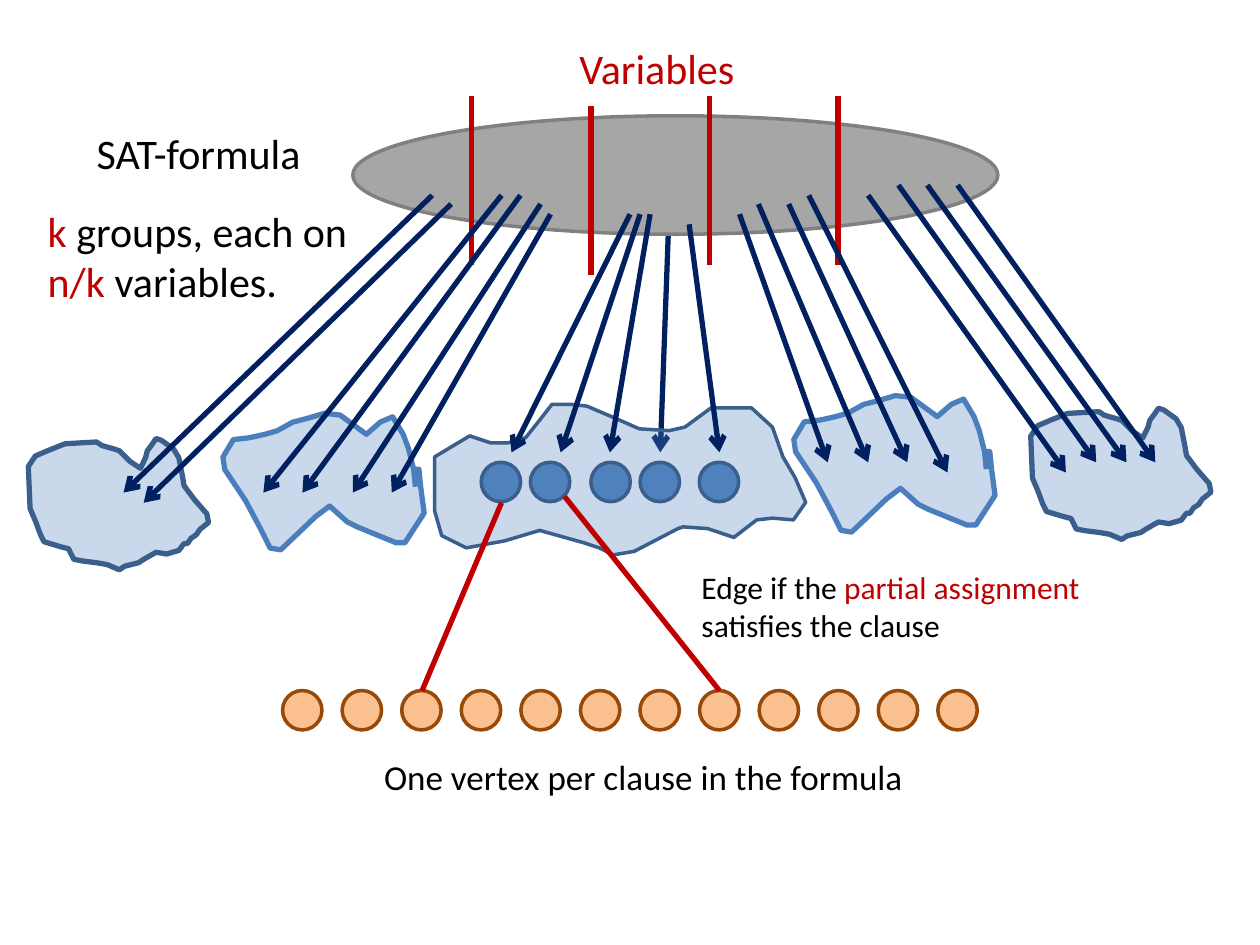
from dataclasses import dataclass

from lxml import etree
from pptx import Presentation
from pptx.dml.color import RGBColor
from pptx.enum.shapes import MSO_CONNECTOR, MSO_SHAPE
from pptx.enum.text import MSO_AUTO_SIZE
from pptx.oxml.ns import qn
from pptx.util import Pt

STRAIGHT = MSO_CONNECTOR.STRAIGHT
OVAL = MSO_SHAPE.OVAL
FIT_SHAPE = MSO_AUTO_SIZE.SHAPE_TO_FIT_TEXT


@dataclass(frozen=True)
class Theme:
    font: str = "Calibri"
    large: int = 24
    medium: int = 20
    small: int = 18
    black: str = "000000"
    red: str = "C00000"
    navy: str = "002060"
    blue: str = "4F81BD"
    blue_edge: str = "3A5F8C"
    wing_edge: str = "4B7EBC"
    gray: str = "A6A6A6"
    gray_edge: str = "808080"
    orange: str = "FAC090"
    orange_edge: str = "984807"
    thin: int = 2
    thick: int = 3
    region_alpha: int = 30000


THEME = Theme()

LABELS = [
    ((324, 20.9, 104.4, 36), THEME.large, [[[("Variables", THEME.red)]]]),
    ((48.2, 69.1, 133.9, 36), THEME.large, [[[("SAT-formula", THEME.black)]]]),
    ((20.2, 113.8, 187.2, 65.5), THEME.large, [
        [[("k", THEME.red), (" groups, each on", THEME.black)]],
        [[("n/k", THEME.red), (" variables.", THEME.black)]],
    ]),
    ((212.4, 428.4, 313.9, 31.7), THEME.medium,
     [[[("One vertex per clause in the formula", THEME.black)]]]),
    ((393.8, 321.1, 233.3, 51.1), THEME.small, [[
        [("Edge if the ", THEME.black), ("partial assignment", THEME.red)],
        [("satisfies the clause", THEME.black)],
    ]]),
]

VARIABLE_OVAL = (201.6, 66.2, 368.6, 67.7)
DIVIDERS = [(269.3, 54.7), (337.7, 60.5), (405.4, 54.7), (478.8, 54.7)]
DIVIDER_HEIGHT = 96.5

DOT_SIZE = 22.5
ASSIGNMENT_LEFTS = [275, 303.1, 337.7, 365.8, 399.6]
ASSIGNMENT_TOP = 264.2
CLAUSE_COUNT = 12
CLAUSE_LEFT, CLAUSE_TOP, CLAUSE_STEP = 161.5, 394.6, 34.04
EDGES = [(286.6, 287.3, 241.2, 394.6), (322.6, 283.7, 411.1, 394.6)]

MIDDLE = [
    (171, 76), (184, 66), (193, 65), (205, 66), (212, 56), (206, 42), (199, 30),
    (193, 13), (181, 2), (158, 2), (143, 13), (134, 15), (117, 14), (101, 7),
    (87, 1), (78, 0), (67, 0), (60, 9), (52, 19), (42, 22), (32, 22), (20, 18),
    (0, 30), (0, 61), (4, 75), (18, 82), (40, 78), (60, 72), (85, 79), (94, 82),
    (102, 86), (114, 84), (139, 71), (142, 70), (156, 71),
]
WING = [
    (110, 42), (109, 32), (106, 20), (103, 12), (97, 2), (90, 5), (82, 12),
    (67, 1), (58, 0), (48, 3), (40, 5), (31, 10), (24, 12), (15, 14), (6, 15),
    (0, 25), (1, 32), (13, 50), (21, 65), (27, 77), (33, 78), (53, 59), (61, 53),
    (71, 62), (77, 65), (99, 74), (104, 74), (115, 57), (113, 42), (112, 32),
    (110, 32),
]
CLOUD = [
    (88, 21), (86, 11), (83, 6), (76, 1), (73, 0), (71, 3), (68, 7), (67, 11),
    (64, 17), (58, 13), (52, 7), (49, 6), (42, 4), (39, 2), (21, 3), (11, 7),
    (4, 10), (0, 16), (1, 40), (4, 47), (7, 55), (9, 59), (19, 62), (23, 63),
    (26, 69), (31, 70), (39, 71), (45, 72), (52, 75), (55, 73), (63, 71),
    (66, 69), (73, 65), (79, 66), (86, 64), (89, 60), (91, 60), (93, 57),
    (96, 55), (98, 52), (103, 48), (102, 43), (95, 35), (89, 27),
]

ARROW_BEHIND = (382.3, 122.4, 377.3, 258.5)
MIDDLE_ARROWS = [(360, 122.4, 292.3, 258.5), (365.8, 122.4, 320.4, 258.5),
                 (371.5, 122.4, 348.5, 258.5), (393.8, 128.2, 411.1, 258.5)]
SIDE_REGIONS = [
    (WING, (453.6, 226.1), THEME.wing_edge, False,
     [(422.6, 122.4, 473, 264.2), (433.4, 116.6, 496.1, 264.2),
      (450.7, 116.6, 518.4, 264.2), (462.2, 111.6, 541.4, 270)]),
    (WING, (127.4, 236.2), THEME.wing_edge, False,
     [(286.6, 111.6, 150.5, 281.5), (297.4, 111.6, 172.8, 281.5),
      (308.9, 116.6, 201.6, 281.5), (314.6, 122.4, 223.9, 281.5)]),
    (CLOUD, (16.2, 250.6), THEME.blue_edge, True,
     [(247, 111.6, 70.6, 281.5), (257.8, 116.6, 82.1, 287.3)]),
    (CLOUD, (589, 233.3), THEME.blue_edge, True,
     [(529.9, 105.8, 643.7, 264.2), (547.2, 105.8, 660.2, 264.2),
      (513.4, 105.8, 626.4, 264.2), (496.1, 111.6, 609.1, 270)]),
]


def paint(shape, fill, edge, width):
    shape.shadow.inherit = False
    shape.fill.solid()
    shape.fill.fore_color.rgb = RGBColor.from_string(fill)
    shape.line.color.rgb = RGBColor.from_string(edge)
    shape.line.width = Pt(width)


def add_oval(shapes, frame, fill, edge):
    oval = shapes.add_shape(OVAL, *map(Pt, frame))
    paint(oval, fill, edge, THEME.thin)


def add_line(shapes, ends, color, arrow=False):
    line = shapes.add_connector(STRAIGHT, *map(Pt, ends))
    line.line.color.rgb = RGBColor.from_string(color)
    line.line.width = Pt(THEME.thick)
    properties = line._element.spPr
    if arrow:
        etree.SubElement(properties.find(qn("a:ln")), qn("a:tailEnd"), type="arrow")
    etree.SubElement(properties, qn("a:effectLst"))


def add_region(shapes, outline, origin, edge, width, closed):
    builder = shapes.build_freeform(*outline[0], scale=Pt(1))
    builder.add_line_segments(outline[1:], close=closed)
    region = builder.convert_to_shape(*map(Pt, origin))
    paint(region, THEME.blue, edge, width)
    color = region._element.spPr.find(qn("a:solidFill"))[0]
    etree.SubElement(color, qn("a:alpha"), val=str(THEME.region_alpha))


def add_label(shapes, frame, size, paragraphs):
    box = shapes.add_textbox(*map(Pt, frame))
    text = box.text_frame
    text.word_wrap = False
    text.auto_size = FIT_SHAPE
    for number, lines in enumerate(paragraphs):
        para = text.add_paragraph() if number else text.paragraphs[0]
        for row, spans in enumerate(lines):
            if row:
                para.add_line_break()
            for words, color in spans:
                span = para.add_run()
                span.text = words
                span.font.name = THEME.font
                span.font.size = Pt(size)
                span.font.color.rgb = RGBColor.from_string(color)


def main():
    deck = Presentation()
    deck.slide_width, deck.slide_height = Pt(720), Pt(540)
    page = deck.slides.add_slide(deck.slide_layouts[6])
    shapes = page.shapes

    add_line(shapes, ARROW_BEHIND, THEME.navy, arrow=True)
    add_region(shapes, MIDDLE, (248.4, 231.1), THEME.blue_edge, THEME.thin, True)
    add_oval(shapes, VARIABLE_OVAL, THEME.gray, THEME.gray_edge)
    for left, top in DIVIDERS:
        add_line(shapes, (left, top + DIVIDER_HEIGHT, left, top), THEME.red)
    for ends in MIDDLE_ARROWS:
        add_line(shapes, ends, THEME.navy, arrow=True)
    for left in ASSIGNMENT_LEFTS:
        add_oval(shapes, (left, ASSIGNMENT_TOP, DOT_SIZE, DOT_SIZE),
                 THEME.blue, THEME.blue_edge)
    for outline, origin, edge, closed, arrows in SIDE_REGIONS:
        add_region(shapes, outline, origin, edge, THEME.thick, closed)
        for ends in arrows:
            add_line(shapes, ends, THEME.navy, arrow=True)

    clauses = shapes.add_group_shape().shapes
    for number in range(CLAUSE_COUNT):
        left = CLAUSE_LEFT + number * CLAUSE_STEP
        add_oval(clauses, (left, CLAUSE_TOP, DOT_SIZE, DOT_SIZE),
                 THEME.orange, THEME.orange_edge)
    for ends in EDGES:
        add_line(shapes, ends, THEME.red)
    for label in LABELS:
        add_label(shapes, *label)

    deck.save("out.pptx")


if __name__ == "__main__":
    main()
